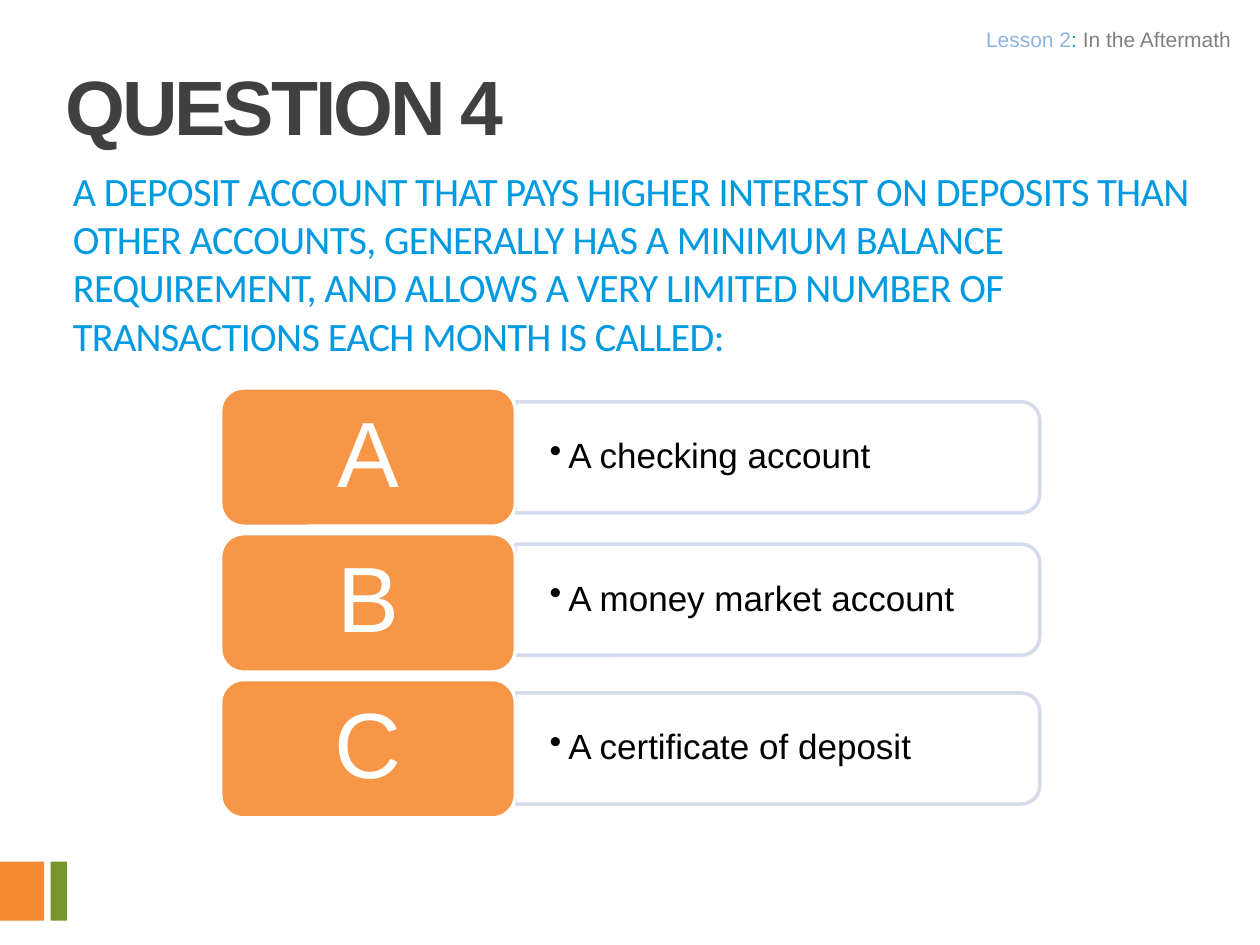
from dataclasses import dataclass

from lxml import etree
from pptx import Presentation
from pptx.dml.color import RGBColor
from pptx.enum.shapes import MSO_SHAPE
from pptx.enum.text import MSO_ANCHOR, MSO_AUTO_SIZE, PP_ALIGN
from pptx.oxml.ns import qn
from pptx.util import Cm, Pt

RECT, ROUND = MSO_SHAPE.RECTANGLE, MSO_SHAPE.ROUNDED_RECTANGLE
TAB = MSO_SHAPE.ROUND_2_SAME_RECTANGLE
LEFT, MID, RIGHT = PP_ALIGN.LEFT, PP_ALIGN.CENTER, PP_ALIGN.RIGHT
TOP, CENTER = MSO_ANCHOR.TOP, MSO_ANCHOR.MIDDLE
FIXED = MSO_AUTO_SIZE.NONE


@dataclass(frozen=True)
class Theme:
    # Fonts
    main: str = "Arial"
    prompt: str = "Calibri"
    # Colours
    white: str = "FFFFFF"
    black: str = "000000"
    dark: str = "404040"
    gray: str = "808080"
    blue: str = "009AE1"
    pale: str = "8EB4E3"
    edge: str = "D0D8E8"
    tile: str = "F79646"
    orange: str = "F38A31"
    green: str = "77972B"
    # Type sizes
    title: int = 44
    body: int = 23
    letter: int = 53
    answer: int = 20
    small: int = 12


def fade(fill, share):
    """Set the opacity of a solid fill, in percent."""
    color = fill._xPr.find(qn("a:solidFill"))[0]
    etree.SubElement(color, qn("a:alpha")).set("val", str(share * 1000))


def write(shape, parts, size, font, align=LEFT, anchor=TOP, pad=(0.25, 0.13, 0.25, 0.13),
          line=None, bold=False, track=0, bullet=None, hang=0):
    """Fill a shape with one paragraph made of (text, colour) parts."""
    frame = shape.text_frame
    frame.word_wrap, frame.auto_size = True, FIXED
    frame.vertical_anchor = anchor
    (frame.margin_left, frame.margin_top,
     frame.margin_right, frame.margin_bottom) = map(Cm, pad)

    para = frame.paragraphs[0]
    para.alignment, para.space_before = align, Pt(0)
    if line:
        para.line_spacing = line
    props = para._p.get_or_add_pPr()
    props.set("marL", str(Cm(hang)))
    props.set("indent", str(-Cm(hang)))
    if bullet:
        etree.SubElement(props, qn("a:buChar")).set("char", bullet)
    else:
        etree.SubElement(props, qn("a:buNone"))

    for text, color in parts:
        run = para.add_run()
        run.text = text
        run.font.name, run.font.size, run.font.bold = font, Pt(size), bold
        run.font.color.rgb = RGBColor.from_string(color)
        if track:
            run.font._element.set("spc", str(int(track * 100)))


class Deck:
    def __init__(self, theme):
        self.theme = theme
        self.file = Presentation()
        self.file.slide_width, self.file.slide_height = Cm(25.4), Cm(19.05)
        self.slide = self.file.slides.add_slide(self.file.slide_layouts[1])

    def holder(self, index, box, parts, **style):
        shape = self.slide.placeholders[index]
        shape.left, shape.top, shape.width, shape.height = map(Cm, box)
        write(shape, parts, **style)

    def label(self, box, parts, **style):
        write(self.slide.shapes.add_textbox(*map(Cm, box)), parts, **style)

    def block(self, kind, box, fill, edge=None):
        shape = self.slide.shapes.add_shape(kind, *map(Cm, box))
        shape.shadow.inherit = False
        shape.fill.solid()
        shape.fill.fore_color.rgb = RGBColor.from_string(fill)
        if edge:
            shape.line.color.rgb = RGBColor.from_string(edge)
            shape.line.width = Pt(2)
        else:
            shape.line.fill.background()
        return shape

    def choice(self, letter, answer, top, mid):
        """Draw an answer frame centred on mid and its letter tile at top."""
        look = self.theme
        left, wide, high = 10.39, 10.57, 2.24
        # The frame stands upright and is turned so its round corners face right
        box = (left + (wide - high) / 2, mid - wide / 2, high, wide)
        frame = self.block(TAB, box, look.white, look.edge)
        frame.rotation = 90
        fade(frame.fill, 90)
        fade(frame.line.fill, 90)
        self.label((left, mid - 1, 10.46, 2), [(answer, look.black)],
                   size=look.answer, font=look.main, anchor=CENTER,
                   pad=(0.69, 0.36, 0, 0.36), line=0.9, bullet="•", hang=0.38)
        tile = self.block(ROUND, (4.45, top, 5.94, 2.79), look.tile, look.white)
        write(tile, [(letter, look.white)], size=look.letter, font=look.main,
              align=MID, anchor=CENTER, line=0.9)


def main():
    look = Theme()
    deck = Deck(look)

    # Corner bars
    for left, width, color in ((0, 0.89, look.orange), (1.02, 0.33, look.green)):
        deck.block(RECT, (left, 17.37, width, 1.19), color)

    # Title and question
    deck.holder(0, (1.07, 0.84, 22, 2.11), [("QUESTION 4", look.dark)],
                size=look.title, font=look.main, bold=True, track=-1.8, line=Pt(59))
    deck.holder(1, (1.22, 3.18, 24.13, 3.18),
                [("A DEPOSIT ACCOUNT THAT PAYS HIGHER INTEREST ON DEPOSITS THAN "
                  "OTHER ACCOUNTS, GENERALLY HAS A MINIMUM BALANCE REQUIREMENT, "
                  "AND ALLOWS A VERY LIMITED NUMBER OF TRANSACTIONS EACH MONTH "
                  "IS CALLED:", look.blue)],
                size=look.body, font=look.prompt, track=-0.4, line=Pt(27.5),
                pad=(0.25, 0.18, 0.25, 0.13))

    # Answers
    answers = (("A", "A checking account", 9.22),
               ("B", "A money market account", 12.09),
               ("C", "A certificate of deposit", 15.09))
    for row, (letter, answer, mid) in enumerate(answers):
        deck.choice(letter, answer, 7.82 + row * 2.94, mid)

    # Lesson header
    deck.label((10.16, 0.43, 14.86, 0.81),
               [("Lesson 2", look.pale), (": ", look.blue),
                ("In the Aftermath", look.gray)],
               size=look.small, font=look.main, align=RIGHT, pad=(0.2, 0.1, 0.2, 0.1))

    deck.file.save("out.pptx")


if __name__ == "__main__":
    main()
